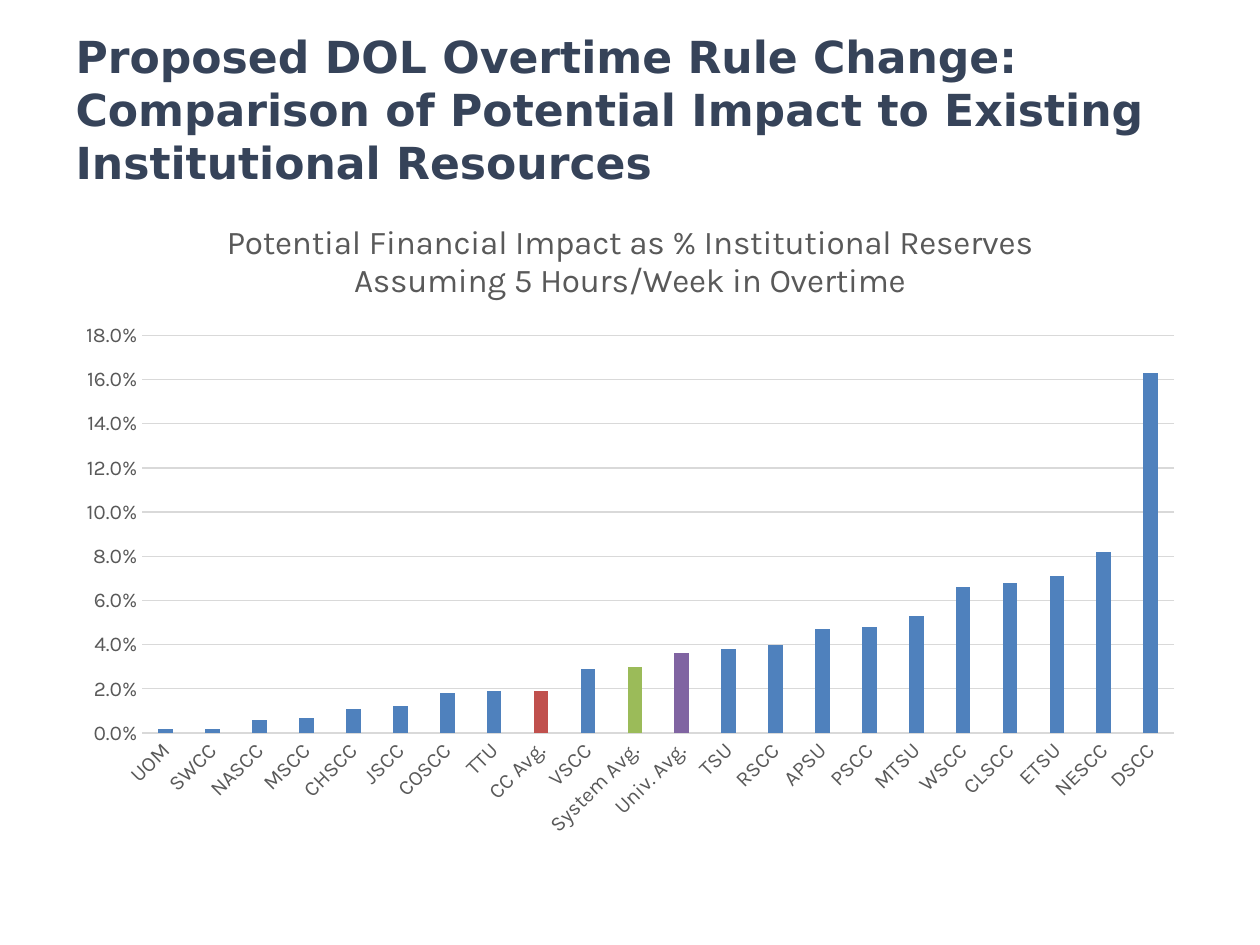
import dataclasses

import lxml.etree
import pptx
import pptx.chart.data
import pptx.dml.color
import pptx.enum.chart
import pptx.enum.text
import pptx.oxml
import pptx.oxml.ns
import pptx.util


@dataclasses.dataclass(frozen=True)
class Theme:
    title_font: str = "DejaVu Sans"
    chart_font: str = "Karla"
    title_size: float = 25.2
    heading_size: float = 19
    label_size: float = 12
    navy: str = "364359"
    grey: str = "595959"
    rule: str = "D9D9D9"
    institution: str = "4F81BD"
    college_average: str = "C0504D"
    system_average: str = "9BBB59"
    university_average: str = "8064A2"
    rule_width: float = 0.75


THEME = Theme()
WIDTH, HEIGHT = pptx.util.Inches(10), pptx.util.Inches(7.5)
TITLE_BOX = (0.05, 0.02, 0.9, 0.19)
CHART_BOX = (0.05, 0.21, 0.9, 0.69)
PLOT_SHARES = {"x": 0.07, "y": 0.21, "w": 0.91, "h": 0.61}

TITLE_LINES = (
    "Proposed DOL Overtime Rule Change:",
    "Comparison of Potential Impact to Existing Institutional Resources",
)
HEADING_LINES = (
    "Potential Financial Impact as % Institutional Reserves",
    "Assuming 5 Hours/Week in Overtime",
)
IMPACT = {
    "UOM": 0.002, "SWCC": 0.002, "NASCC": 0.006, "MSCC": 0.007,
    "CHSCC": 0.011, "JSCC": 0.012, "COSCC": 0.018, "TTU": 0.019,
    "CC Avg.": 0.019, "VSCC": 0.029, "System Avg.": 0.03,
    "Univ. Avg.": 0.036, "TSU": 0.038, "RSCC": 0.04, "APSU": 0.047,
    "PSCC": 0.048, "MTSU": 0.053, "WSCC": 0.066, "CLSCC": 0.068,
    "ETSU": 0.071, "NESCC": 0.082, "DSCC": 0.163,
}
AVERAGE_COLOURS = {
    "CC Avg.": THEME.college_average,
    "System Avg.": THEME.system_average,
    "Univ. Avg.": THEME.university_average,
}


def place(box):
    left, top, width, height = box
    return [int(share * side) for share, side in
            ((left, WIDTH), (top, HEIGHT), (width, WIDTH), (height, HEIGHT))]


def rgb(colour):
    return pptx.dml.color.RGBColor.from_string(colour)


def style_font(font, face, size, colour, bold=False):
    font.name = face
    font.size = pptx.util.Pt(size)
    font.bold = bold
    font.color.rgb = rgb(colour)


def style_rule(line):
    line.color.rgb = rgb(THEME.rule)
    line.width = pptx.util.Pt(THEME.rule_width)


def paint(fill, colour):
    fill.solid()
    fill.fore_color.rgb = rgb(colour)


def add_title(slide, box):
    title = slide.shapes.title
    title.left, title.top, title.width, title.height = place(box)
    frame = title.text_frame
    frame.word_wrap = True
    frame.auto_size = pptx.enum.text.MSO_AUTO_SIZE.NONE
    frame.vertical_anchor = pptx.enum.text.MSO_ANCHOR.MIDDLE
    paragraph = frame.paragraphs[0]
    paragraph.alignment = pptx.enum.text.PP_ALIGN.LEFT
    for index, words in enumerate(TITLE_LINES):
        if index:
            paragraph.add_line_break()
        run = paragraph.add_run()
        run.text = words
        style_font(run.font, THEME.title_font, THEME.title_size, THEME.navy, True)


def add_heading(chart):
    chart.has_title = True
    frame = chart.chart_title.text_frame
    for index, words in enumerate(HEADING_LINES):
        paragraph = frame.add_paragraph() if index else frame.paragraphs[0]
        run = paragraph.add_run()
        run.text = words
        style_font(run.font, THEME.chart_font, THEME.heading_size, THEME.grey)


def fix_plot_area(chart):
    qn = pptx.oxml.ns.qn
    plot_area = chart.element.find(".//" + qn("c:plotArea"))
    for old in plot_area.findall(qn("c:layout")):
        plot_area.remove(old)
    layout = pptx.oxml.parse_xml(
        f"<c:layout {pptx.oxml.ns.nsdecls('c')}><c:manualLayout/></c:layout>")
    settings = {"layoutTarget": "inner", "xMode": "edge", "yMode": "edge"}
    for tag, value in {**settings, **PLOT_SHARES}.items():
        lxml.etree.SubElement(layout[0], qn("c:" + tag)).set("val", str(value))
    plot_area.insert(0, layout)


def style_axes(chart):
    for axis in (chart.category_axis, chart.value_axis):
        axis.major_tick_mark = pptx.enum.chart.XL_TICK_MARK.NONE
        axis.minor_tick_mark = pptx.enum.chart.XL_TICK_MARK.NONE
        style_font(axis.tick_labels.font, THEME.chart_font,
                   THEME.label_size, THEME.grey)
    style_rule(chart.category_axis.format.line)
    label_body = chart.category_axis.tick_labels.font._element.getparent().getparent().getparent()
    label_body.find(pptx.oxml.ns.qn("a:bodyPr")).set("rot", "-2700000")
    percent = chart.value_axis
    percent.minimum_scale, percent.maximum_scale = 0, 0.18
    percent.major_unit = 0.02
    percent.tick_labels.number_format = "0.0%"
    percent.tick_labels.number_format_is_linked = False
    percent.format.line.fill.background()
    style_rule(percent.major_gridlines.format.line)


def add_impact_chart(slide, box):
    impact = pptx.chart.data.CategoryChartData(number_format="0.0%")
    impact.categories = list(IMPACT)
    impact.add_series("Series 1", list(IMPACT.values()))
    chart = slide.shapes.add_chart(
        pptx.enum.chart.XL_CHART_TYPE.COLUMN_CLUSTERED, *place(box), impact).chart
    chart.font.name = THEME.chart_font
    chart.has_legend = False
    add_heading(chart)
    fix_plot_area(chart)
    style_axes(chart)
    columns = chart.plots[0]
    columns.vary_by_categories = False
    columns.gap_width, columns.overlap = 219, -27
    series = columns.series[0]
    paint(series.format.fill, THEME.institution)
    for index, name in enumerate(IMPACT):
        if name in AVERAGE_COLOURS:
            paint(series.points[index].format.fill, AVERAGE_COLOURS[name])


def main():
    deck = pptx.Presentation()
    deck.slide_width, deck.slide_height = WIDTH, HEIGHT
    slide = deck.slides.add_slide(deck.slide_layouts.get_by_name("Title Only"))
    add_title(slide, TITLE_BOX)
    add_impact_chart(slide, CHART_BOX)
    deck.save("out.pptx")


if __name__ == "__main__":
    main()
